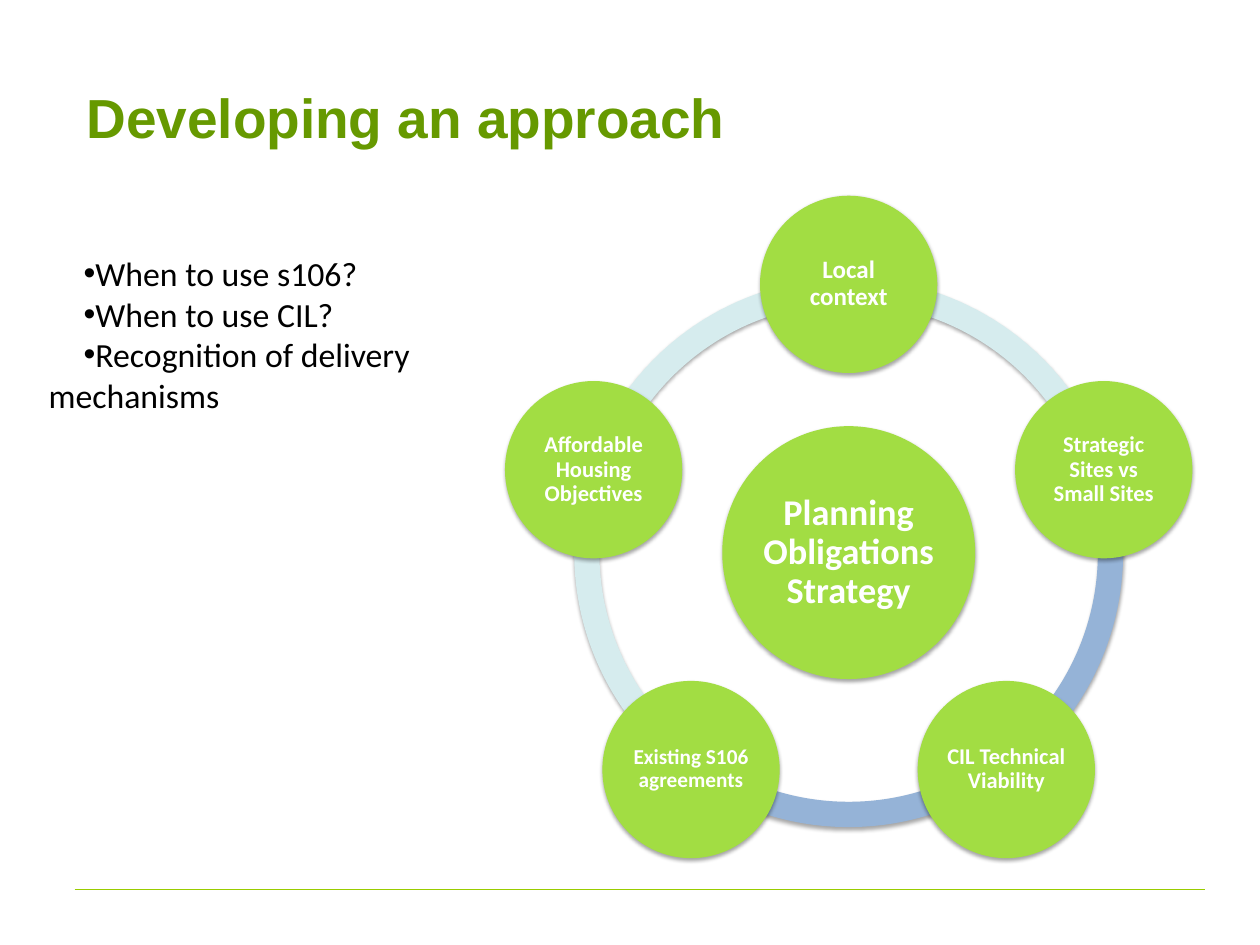
from math import cos, radians, sin

from lxml import etree
from pptx import Presentation
from pptx.dml.color import RGBColor
from pptx.enum.shapes import MSO_CONNECTOR, MSO_SHAPE
from pptx.enum.text import MSO_ANCHOR, MSO_AUTO_SIZE, PP_ALIGN
from pptx.oxml import parse_xml
from pptx.oxml.ns import nsdecls, qn
from pptx.util import Inches, Pt

TITLE_GREEN = RGBColor(0x66, 0x99, 0x00)
RULE_GREEN = RGBColor(0x99, 0xCC, 0x00)
CIRCLE_GREEN = RGBColor(0xA2, 0xDD, 0x43)
PALE_BLUE = RGBColor(0xD6, 0xEC, 0xEE)
MID_BLUE = RGBColor(0x95, 0xB3, 0xD7)
WHITE = RGBColor(0xFF, 0xFF, 0xFF)
BLACK = RGBColor(0, 0, 0)

CENTRE_X, CENTRE_Y = 9.43, 6.14


def add_round(kind, x, y, diameter, colour):
    """Add a borderless, softly shadowed shape centred on x, y."""
    shape = slide.shapes.add_shape(
        kind, Inches(x - diameter / 2), Inches(y - diameter / 2),
        Inches(diameter), Inches(diameter))
    shape.fill.solid()
    shape.fill.fore_color.rgb = colour
    shape.line.fill.background()
    shape.shadow.inherit = False
    shape._element.spPr.find(qn("a:effectLst")).append(parse_xml(
        f'<a:outerShdw {nsdecls("a")} blurRad="40000" dist="23000" '
        'dir="5400000" rotWithShape="0"><a:srgbClr val="000000">'
        '<a:alpha val="35000"/></a:srgbClr></a:outerShdw>'))
    return shape


def add_circle(label, size, x, y, diameter, inset):
    circle = add_round(MSO_SHAPE.OVAL, x, y, diameter, CIRCLE_GREEN)
    frame = circle.text_frame
    frame.word_wrap = True
    frame.vertical_anchor = MSO_ANCHOR.MIDDLE
    frame.margin_left = frame.margin_right = Inches(inset)
    frame.margin_top = frame.margin_bottom = Inches(inset)
    frame.text = label
    paragraph = frame.paragraphs[0]
    paragraph.alignment = PP_ALIGN.CENTER
    paragraph.line_spacing = 0.9
    paragraph.font.name = "Calibri"
    paragraph.font.size = Pt(size)
    paragraph.font.bold = True
    paragraph.font.color.rgb = WHITE


prs = Presentation()
prs.slide_width, prs.slide_height = Inches(14), Inches(10.5)
slide = prs.slides.add_slide(prs.slide_layouts[1])
title, questions = slide.placeholders

# Title and body frames
for holder, box, anchor in (
        (title, (0.83, 0.42, 12.6, 1.75), MSO_ANCHOR.MIDDLE),
        (questions, (0.41, 2.74, 4.78, 3.81), MSO_ANCHOR.TOP)):
    holder.left, holder.top, holder.width, holder.height = map(Inches, box)
    frame = holder.text_frame
    frame.word_wrap = True
    frame.auto_size = MSO_AUTO_SIZE.NONE
    frame.vertical_anchor = anchor
    frame.margin_left = frame.margin_right = Inches(0.13)
    frame.margin_top = frame.margin_bottom = Inches(0.07)

title.text_frame.text = "Developing an approach"
heading = title.text_frame.paragraphs[0]
heading.alignment = PP_ALIGN.LEFT
heading.font.name = "Arial"
heading.font.size = Pt(44)
heading.font.bold = True
heading.font.color.rgb = TITLE_GREEN

# Bulleted questions
questions.text_frame.text = "\n".join((
    "When to use s106?",
    "When to use CIL?",
    "Recognition of delivery mechanisms",
))
for question in questions.text_frame.paragraphs:
    question.space_before = Pt(0)
    question.font.name = "Calibri"
    question.font.size = Pt(27)
    question.font.color.rgb = BLACK
    properties = question._p.get_or_add_pPr()
    properties.set("marL", "0")
    properties.set("indent", str(Inches(0.39)))
    bullet = etree.Element(qn("a:buChar"), char="•")
    properties.find(qn("a:defRPr")).addprevious(bullet)

# Footer rule
rule = slide.shapes.add_connector(
    MSO_CONNECTOR.STRAIGHT, Inches(0.83), Inches(9.88), Inches(13.39), Inches(9.88))
rule.line.color.rgb = RULE_GREEN
rule.line.width = Pt(0.75)
etree.SubElement(rule._element.spPr, qn("a:effectLst"))

# Ring: one arc from each node clockwise to the next
nodes = [
    ("Local context", 20, 0.03, PALE_BLUE),
    ("Strategic Sites vs Small Sites", 18, 0.03, MID_BLUE),
    ("CIL Technical Viability", 18, 0.03, MID_BLUE),
    ("Existing S106 agreements", 17, 0.02, PALE_BLUE),
    ("Affordable Housing Objectives", 18, 0.03, PALE_BLUE),
]
step = 360 / len(nodes)
angles = [(270 + i * step) % 360 for i in range(len(nodes))]
for (_, _, _, colour), angle in reversed(list(zip(nodes, angles))):
    arc = add_round(MSO_SHAPE.BLOCK_ARC, CENTRE_X, CENTRE_Y, 6.1, colour)
    # Adjustments count in 100000ths, angles in 60000ths of a degree
    arc.adjustments[0] = angle * 0.6
    arc.adjustments[1] = (angle + step) % 360 * 0.6
    arc.adjustments[2] = 0.046

# Hub and nodes
add_circle("Planning Obligations Strategy", 29, CENTRE_X, CENTRE_Y, 2.81, 0.04)
for (label, size, inset, _), angle in zip(nodes, angles):
    add_circle(label, size,
               CENTRE_X + 2.98 * cos(radians(angle)),
               CENTRE_Y + 2.98 * sin(radians(angle)), 1.97, inset)

prs.save("out.pptx")
